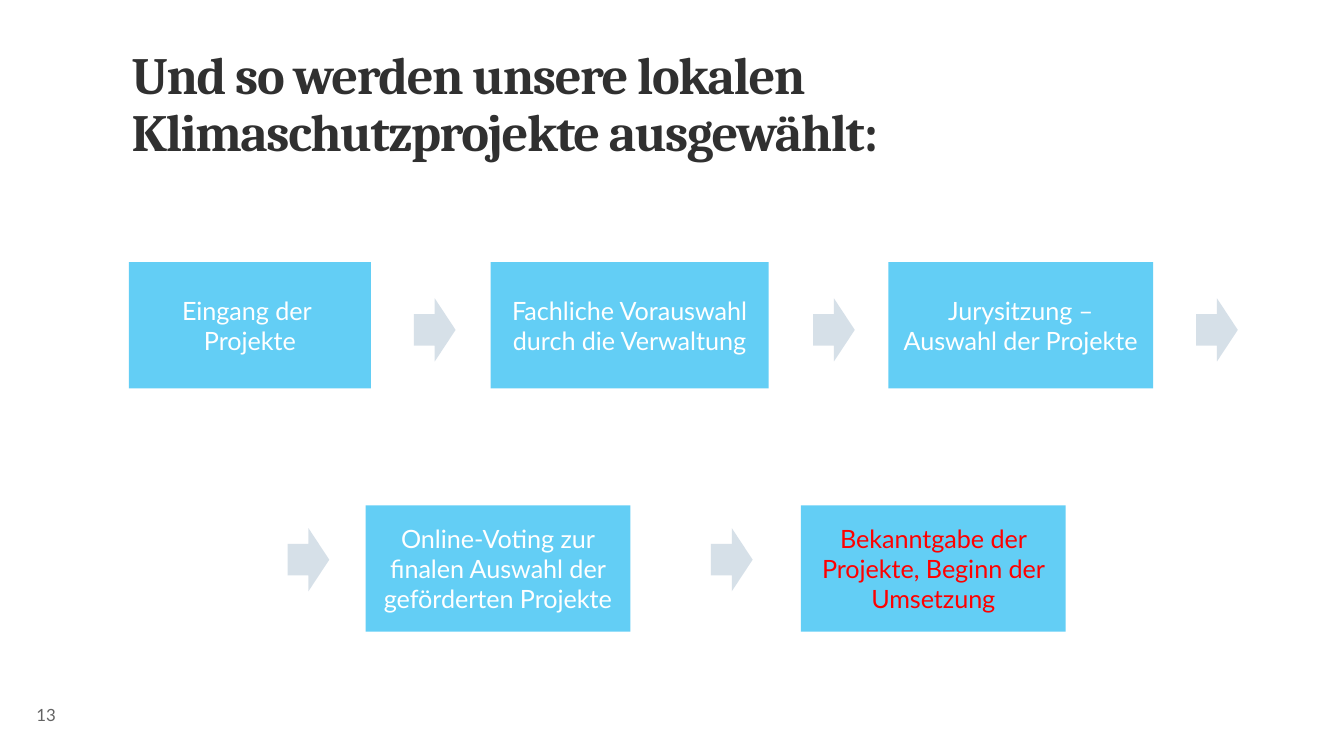
"""Build the slide on how local climate projects are selected."""
from lxml.etree import SubElement
from pptx import Presentation
from pptx.dml.color import RGBColor
from pptx.enum.shapes import MSO_SHAPE
from pptx.enum.text import MSO_ANCHOR, MSO_AUTO_SIZE, PP_ALIGN
from pptx.oxml.ns import qn
from pptx.util import Inches, Pt

HEX = {"box": "00B0F0", "arrow": "BDCDDB", "light": "FFFFFF",
       "red": "FF0000", "dark": "303030", "grey": "636363"}
TITLE = "Und so werden unsere lokalen Klimaschutzprojekte ausgewählt:"
PAGE = "13"
ROWS = [
    {"top": 1.95, "tip": 2.22, "arrows": [3.08, 6.05, 8.9], "steps": [
        (0.96, 1.8, "Eingang der \vProjekte", "light"),
        (3.65, 2.07, "Fachliche Vorauswahl durch die Verwaltung", "light"),
        (6.61, 1.97, "Jurysitzung – Auswahl der Projekte", "light")]},
    {"top": 3.76, "tip": 3.93, "arrows": [2.14, 5.29], "steps": [
        (2.72, 1.97, "Online-Voting zur finalen Auswahl der geförderten Projekte",
         "light"),
        (5.96, 1.97, "Bekanntgabe der Projekte, Beginn der Umsetzung", "red")]},
]
WIDTH = 10
HEIGHT = WIDTH * 9 / 16
STEP_H, ARROW_W, ARROW_H = 0.94, 0.31, 0.47
ALPHA = 61


def write(shape, text, size, color, font="Lato", bold=False, align=PP_ALIGN.LEFT,
          anchor=MSO_ANCHOR.MIDDLE, inset=(0.1, 0.05, 0.1, 0.05),
          lead=None, track=None):
    frame = shape.text_frame
    frame.auto_size = MSO_AUTO_SIZE.NONE
    frame.word_wrap = True
    frame.vertical_anchor = anchor
    (frame.margin_left, frame.margin_top,
     frame.margin_right, frame.margin_bottom) = map(Inches, inset)
    frame.text = text
    para = frame.paragraphs[0]
    para.alignment = align
    para.line_spacing = lead
    for run in para.runs:
        run.font.name = font
        run.font.size = Pt(size)
        run.font.bold = bold
        run.font.color.rgb = RGBColor.from_string(HEX[color])
        if track:
            run.font._element.set("spc", str(round(track * 100)))


def draw(slide, kind, color, *place):
    shape = slide.shapes.add_shape(kind, *map(Inches, place))
    shape.shadow.inherit = False
    shape.line.fill.background()
    shape.fill.solid()
    shape.fill.fore_color.rgb = RGBColor.from_string(HEX[color])
    tint = shape._element.spPr.find(qn("a:solidFill"))[0]
    SubElement(tint, qn("a:alpha")).set("val", str(ALPHA * 1000))
    return shape


def main():
    deck = Presentation()
    deck.slide_width, deck.slide_height = Inches(WIDTH), Inches(HEIGHT)
    slide = deck.slides.add_slide(deck.slide_layouts[5])

    title = slide.shapes.title
    title.left, title.top, title.width, title.height = map(
        Inches, (0.98, 0.37, 7.95, 1.28))
    write(title, TITLE, 28, "dark", font="Cambria", bold=True,
          anchor=MSO_ANCHOR.TOP, inset=(0, 0, 0, 0), lead=0.9, track=-0.75)

    page = slide.shapes.add_textbox(*map(Inches, (0.27, 5.1, 0.55, 0.29)))
    write(page, PAGE, 9, "grey", anchor=MSO_ANCHOR.BOTTOM, inset=(0, 0.05, 0.1, 0))

    for row in ROWS:
        for left, width, text, color in row["steps"]:
            step = draw(slide, MSO_SHAPE.RECTANGLE, "box",
                        left, row["top"], width, STEP_H)
            write(step, text, 13.5, color, align=PP_ALIGN.CENTER)
        for left in row["arrows"]:
            draw(slide, MSO_SHAPE.RIGHT_ARROW, "arrow",
                 left, row["tip"], ARROW_W, ARROW_H)

    deck.save("out.pptx")


if __name__ == "__main__":
    main()
